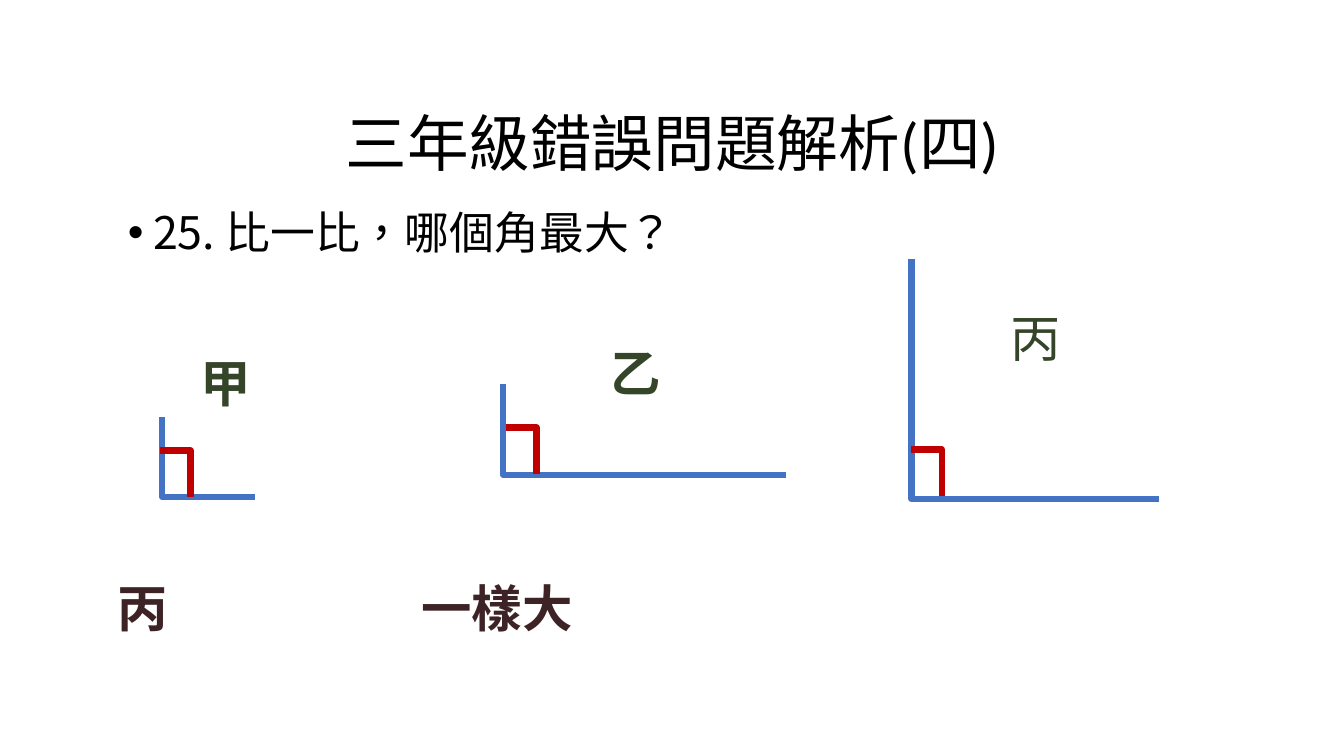
"""Build a slide that compares three right angles of different side lengths."""
from lxml.etree import SubElement
from pptx import Presentation
from pptx.dml.color import RGBColor
from pptx.enum.shapes import MSO_CONNECTOR
from pptx.enum.text import MSO_ANCHOR, PP_ALIGN
from pptx.oxml.ns import qn
from pptx.util import Inches, Pt

COLORS = {"ink": "000000", "side": "4472C4", "mark": "C00000",
          "label": "344529", "answer": "3D2325"}
LATIN, HAN = "Calibri", "Noto Sans CJK SC"

TITLE = ("三年級錯誤問題解析(四)", (1.17, 0.7, 11, 1.5))
QUESTION = ("25. 比一比，哪個角最大？", (1.17, 2.04, 11, 3.71))
LABELS = [
    ("甲", (1.89, 3.44, 0.68, 0.71), "label", True),
    ("乙", (5.96, 3.34, 0.68, 0.71), "label", True),
    ("丙", (9.92, 3, 0.68, 0.71), "label", False),
    ("丙", (1.07, 5.68, 2.91, 0.71), "answer", True),
    ("一樣大", (4.08, 5.68, 3.31, 0.71), "answer", True),
]
ANGLES = [
    {"side": (1.61, 4.14, 2.53, 4.93), "mark": (1.59, 4.47)},
    {"side": (4.99, 3.81, 7.8, 4.71), "mark": (5.02, 4.24)},
    {"side": (9.04, 2.57, 11.49, 4.95), "mark": (9.04, 4.46)},
]
MARK_WIDTH, MARK_HEIGHT = 0.3, 0.46
CORNER_AT_START, CORNER_AT_END = 0, 100000


def write(paragraph, text, size, color, latin=LATIN, bold=False):
    """Add one run of Traditional Chinese text."""
    run = paragraph.add_run()
    run.text = text
    run.font.size = Pt(size)
    run.font.bold = bold
    run.font.name = latin
    run.font.color.rgb = RGBColor.from_string(COLORS[color])
    properties = run._r.get_or_add_rPr()
    properties.set("lang", "zh-TW")
    SubElement(properties, qn("a:ea")).set("typeface", HAN)


def add_text_frame(slide, place):
    """Add a wrapping text box and return its frame."""
    frame = slide.shapes.add_textbox(*map(Inches, place)).text_frame
    frame.word_wrap = True
    return frame


def add_corner(slide, ends, color, bend):
    """Draw an elbow line with its single corner at the given bend."""
    corner = slide.shapes.add_connector(MSO_CONNECTOR.ELBOW, *map(Inches, ends))
    corner.line.color.rgb = RGBColor.from_string(COLORS[color])
    corner.line.width = Pt(4.5)
    properties = corner._element.spPr
    guide = SubElement(properties.prstGeom.get_or_add_avLst(), qn("a:gd"))
    guide.set("name", "adj1")
    guide.set("fmla", f"val {bend}")
    SubElement(properties, qn("a:effectLst"))


def add_title(slide):
    """Place and fill the title."""
    text, place = TITLE
    title = slide.shapes.title
    title.left, title.top, title.width, title.height = map(Inches, place)
    title.text_frame.vertical_anchor = MSO_ANCHOR.MIDDLE
    heading = title.text_frame.paragraphs[0]
    heading.alignment = PP_ALIGN.CENTER
    heading.line_spacing = 0.9
    write(heading, text, 44, "ink")


def add_question(slide):
    """Add the bulleted question."""
    text, place = QUESTION
    question = add_text_frame(slide, place).paragraphs[0]
    question.line_spacing = 0.9
    properties = question._p.get_or_add_pPr()
    properties.set("marL", str(Inches(0.25)))
    properties.set("indent", str(Inches(-0.25)))
    SubElement(properties, qn("a:buFont")).set("typeface", "Arial")
    SubElement(properties, qn("a:buChar")).set("char", "•")
    write(question, text, 32, "ink", latin=HAN)


def main():
    """Create and save the slide."""
    deck = Presentation()
    deck.slide_width, deck.slide_height = Inches(13.33), Inches(7.5)
    slide = deck.slides.add_slide(deck.slide_layouts.get_by_name("Title Only"))
    add_title(slide)
    add_question(slide)
    for angle in ANGLES:
        add_corner(slide, angle["side"], "side", CORNER_AT_START)
    for angle in ANGLES:
        left, top = angle["mark"]
        ends = (left, top, left + MARK_WIDTH, top + MARK_HEIGHT)
        add_corner(slide, ends, "mark", CORNER_AT_END)
    for text, place, color, bold in LABELS:
        label = add_text_frame(slide, place).paragraphs[0]
        write(label, text, 36, color, bold=bold)
    deck.save("out.pptx")


if __name__ == "__main__":
    main()
